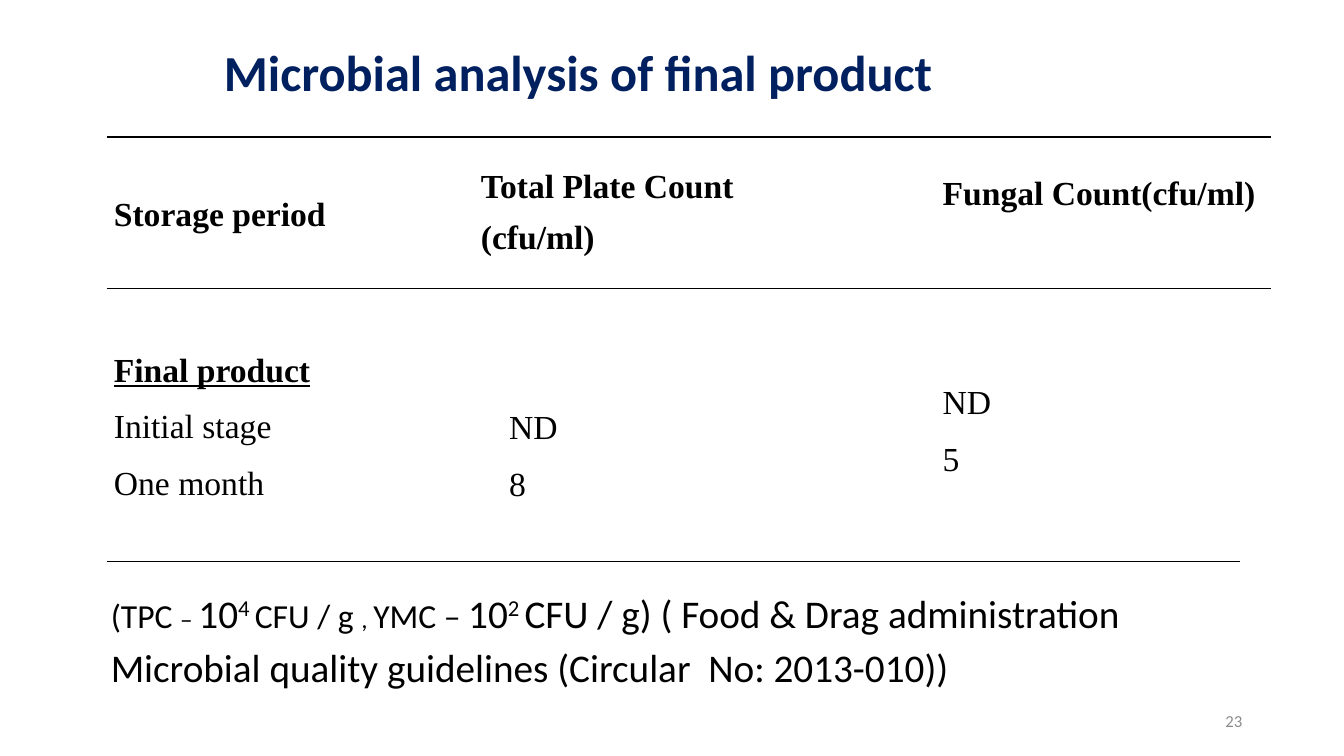
import lxml.etree
import pptx
import pptx.dml.color
import pptx.enum.text
import pptx.oxml.ns
import pptx.util
from pptx.util import Inches

qn = pptx.oxml.ns.qn
ANCHOR = pptx.enum.text.MSO_ANCHOR
ALIGN = pptx.enum.text.PP_ALIGN


def style_font(font, name, size, color, bold=False):
    font.name = name
    font.size = pptx.util.Pt(size)
    font.bold = bold
    font.color.rgb = pptx.dml.color.RGBColor.from_string(color)


def add_rule(cell, side):
    """Draw a black 1 pt border; side is lnT or lnB, top before bottom."""
    line = lxml.etree.SubElement(cell._tc.get_or_add_tcPr(), qn(f"a:{side}"), w="12700")
    fill = lxml.etree.SubElement(line, qn("a:solidFill"))
    lxml.etree.SubElement(fill, qn("a:srgbClr"), val="000000")


presentation = pptx.Presentation()
presentation.slide_width = Inches(13.33)
presentation.slide_height = Inches(7.5)
slide = presentation.slides.add_slide(presentation.slide_layouts[5])

# Title
title = slide.shapes.title
title.left, title.top, title.width, title.height = (
    Inches(2.12), Inches(0), Inches(14.4), Inches(1.5))
title.text_frame.text = "Microbial analysis of final product"
title.text_frame.vertical_anchor = ANCHOR.MIDDLE
heading = title.text_frame.paragraphs[0]
heading.alignment = ALIGN.LEFT
heading.line_spacing = 0.9
style_font(heading.font, "Calibri", 36, "002060", bold=True)

# Microbial counts
column_widths = [3.64, 0.28, 4.3, 3.02, 0.31]
row_heights = [1.5, 2.71]
counts = slide.shapes.add_table(
    len(row_heights), len(column_widths),
    Inches(1.06), Inches(1.36), Inches(sum(column_widths)), Inches(sum(row_heights))).table
counts.first_row = False
counts.horz_banding = False
NO_STYLE_NO_GRID = "{2D5ABB26-0587-4C30-8999-92F81FD0307C}"
counts._tbl.tblPr.find(qn("a:tableStyleId")).text = NO_STYLE_NO_GRID
for column, width in zip(counts.columns, column_widths):
    column.width = Inches(width)
for row, height in zip(counts.rows, row_heights):
    row.height = Inches(height)

last_column = len(column_widths) - 1
for column in range(len(column_widths)):
    header, body = counts.cell(0, column), counts.cell(1, column)
    add_rule(header, "lnT")
    add_rule(header, "lnB")
    add_rule(body, "lnT")
    header.fill.background()
    if column < last_column:
        add_rule(body, "lnB")
        body.fill.solid()
        body.fill.fore_color.rgb = pptx.dml.color.RGBColor.from_string("FFFFFF")

for row, first, last in [(0, 1, 2), (0, 3, 4), (1, 0, 1)]:
    counts.cell(row, first).merge(counts.cell(row, last))

# row, column, lines, anchor, top margin, line spacing
cell_texts = [
    (0, 0, ["Storage period"], ANCHOR.MIDDLE, 0, 1.15),
    (0, 1, ["Total Plate Count", "(cfu/ml)"], ANCHOR.MIDDLE, 0, 1.0),
    (0, 3, ["Fungal Count(cfu/ml)"], ANCHOR.TOP, 0.33, 1.15),
    (1, 0, ["Final product", "Initial stage", "One month"], ANCHOR.MIDDLE, 0, 1.15),
    (1, 2, ["ND", "8"], ANCHOR.MIDDLE, 0.58, 1.15),
    (1, 3, ["ND", "5"], ANCHOR.TOP, 0.9, 1.15),
]
for row, column, lines, anchor, top_margin, spacing in cell_texts:
    cell = counts.cell(row, column)
    cell.text = "\n".join(lines)
    cell.vertical_anchor = anchor
    cell.margin_left = cell.margin_right = Inches(0.07)
    cell.margin_top, cell.margin_bottom = Inches(top_margin), Inches(0)
    for paragraph in cell.text_frame.paragraphs:
        is_group = paragraph.text == "Final product"
        paragraph.line_spacing = spacing
        paragraph.space_after = pptx.util.Pt(10)
        style_font(paragraph.font, "Times New Roman", 24, "000000", bold=row == 0 or is_group)
        paragraph.font.underline = is_group

# Guideline limits
limits = slide.shapes.add_textbox(Inches(1), Inches(5.73), Inches(10.75), Inches(1.63))
limits.text_frame.word_wrap = True
guideline = limits.text_frame.paragraphs[0]
guideline.line_spacing = 1.15
guideline.space_after = pptx.util.Pt(10)
guideline_parts = [
    ("(TPC ", 24, False),
    ("– ", 18, False),
    ("10", 28, False),
    ("4 ", 28, True),
    ("CFU / g ", 24, False),
    (", ", 18, False),
    ("YMC – ", 24, False),
    ("10", 28, False),
    ("2 ", 28, True),
    ("CFU / g) ( Food & Drag administration Microbial quality guidelines "
     "(Circular  No: 2013-010))", 28, False),
]
for text, size, superscript in guideline_parts:
    run = guideline.add_run()
    run.text = text
    style_font(run.font, "Calibri", size, "000000")
    if superscript:
        run._r.get_or_add_rPr().set("baseline", "30000")

# Page number
page_box = slide.shapes.add_textbox(Inches(9.42), Inches(6.95), Inches(3), Inches(0.4))
page_box.text_frame.word_wrap = True
page_box.text_frame.vertical_anchor = ANCHOR.MIDDLE
page_number = page_box.text_frame.paragraphs[0]
page_number.text = "23"
page_number.alignment = ALIGN.RIGHT
style_font(page_number.font, "Calibri", 12, "8C8C8C")

presentation.save("out.pptx")
